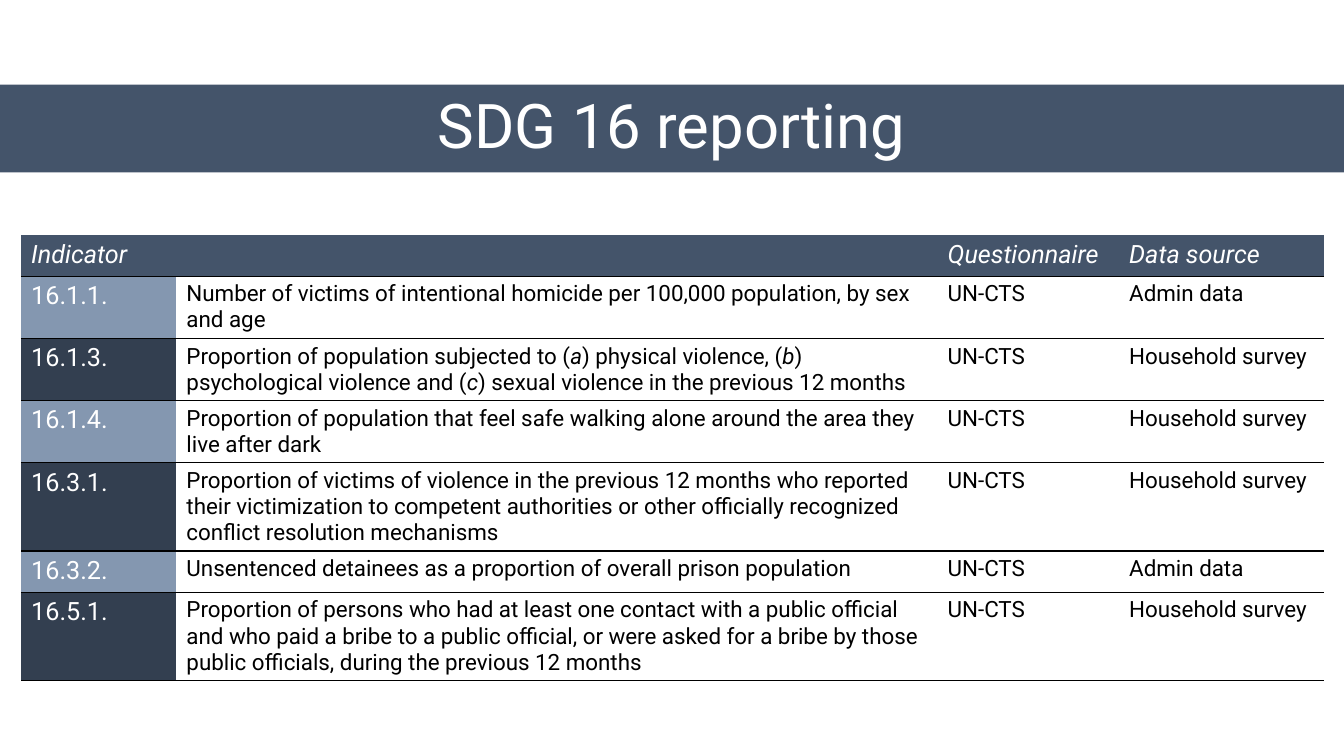
"""Build the SDG 16 reporting slide."""
from lxml import etree
from pptx import Presentation
from pptx.dml.color import RGBColor as Color
from pptx.enum.shapes import MSO_SHAPE as Shape
from pptx.enum.text import MSO_ANCHOR as Anchor, PP_ALIGN as Align
from pptx.oxml import parse_xml
from pptx.oxml.ns import nsdecls, qn
from pptx.util import Inches, Pt

COLORS = {
    "banner": "44546A",
    "light": "8497B0",
    "dark": "333F50",
    "white": "FFFFFF",
    "black": "000000",
}
NO_STYLE = "{2D5ABB26-0587-4C30-8999-92F81FD0307C}"
COLUMN_WIDTHS = [1.54, 7.55, 1.8, 2.03]
ROW_HEIGHTS = [0.41, 0.41, 0.41, 0.41, 0.49, 0.41, 0.41]
HEADERS = ["Indicator", "", "Questionnaire", "Data source"]
INDICATORS = [
    ("16.1.1.", "Number of victims of intentional homicide per 100,000 population, "
     "by sex and age", "Admin data"),
    ("16.1.3.", "Proportion of population subjected to (*a*) physical violence, (*b*) "
     "psychological violence and (*c*) sexual violence in the previous 12 months",
     "Household survey"),
    ("16.1.4.", "Proportion of population that feel safe walking alone around the area "
     "they live after dark", "Household survey"),
    ("16.3.1.", "Proportion of victims of violence in the previous 12 months who reported "
     "their victimization to competent authorities or other officially recognized "
     "conflict resolution mechanisms", "Household survey"),
    ("16.3.2.", "Unsentenced detainees as a proportion of overall prison population",
     "Admin data"),
    ("16.5.1.", "Proportion of persons who had at least one contact with a public official "
     "and who paid a bribe to a public official, or were asked for a bribe by those "
     "public officials, during the previous 12 months", "Household survey"),
]


def write(frame, text, font="Roboto", size=16, color="black", italic=False,
          align=Align.LEFT, spacing=None):
    para = frame.paragraphs[0]
    para.alignment = align
    para.line_spacing = spacing
    for index, part in enumerate(text.split("*")):
        if part:
            span = para.add_run()
            span.text = part
            span.font.name = font
            span.font.size = Pt(size)
            span.font.italic = italic or index % 2 == 1
            span.font.color.rgb = Color.from_string(COLORS[color])


class ReportSlide:
    def __init__(self, deck):
        self.page = deck.slides.add_slide(deck.slide_layouts[6])
        self.font = "Roboto"

    def banner(self, text, left, top, width, height):
        box = self.page.shapes.add_shape(
            Shape.RECTANGLE, Inches(left), Inches(top), Inches(width), Inches(height))
        box.shadow.inherit = False
        box.fill.solid()
        box.fill.fore_color.rgb = Color.from_string(COLORS["banner"])
        box.line.fill.background()
        box.text_frame.word_wrap = True
        box.text_frame.vertical_anchor = Anchor.MIDDLE
        write(box.text_frame, text, self.font, size=44, color="white",
              align=Align.CENTER, spacing=0.9)

    def cell(self, cell, text, fill=None, **style):
        if fill:
            cell.fill.solid()
            cell.fill.fore_color.rgb = Color.from_string(COLORS[fill])
        else:
            cell.fill.background()
        rule = parse_xml(f'<a:lnB {nsdecls("a")} w="{Pt(1)}"/>')
        solid = etree.SubElement(rule, qn("a:solidFill"))
        etree.SubElement(solid, qn("a:srgbClr"), val=COLORS["black"])
        cell._tc.get_or_add_tcPr().insert(0, rule)
        write(cell.text_frame, text, self.font, **style)

    def table(self, left, top, width, height):
        frame = self.page.shapes.add_table(
            len(ROW_HEIGHTS), len(COLUMN_WIDTHS),
            Inches(left), Inches(top), Inches(width), Inches(height))
        table = frame.table
        table.first_row = table.horz_banding = False
        table._tbl.tblPr.find(qn("a:tableStyleId")).text = NO_STYLE
        for column, size in zip(table.columns, COLUMN_WIDTHS):
            column.width = Inches(size)
        for row, size in zip(table.rows, ROW_HEIGHTS):
            row.height = Inches(size)
        for column, header in enumerate(HEADERS):
            self.cell(table.cell(0, column), header, "banner",
                      size=18, color="white", italic=True)
        table.cell(0, 0).merge(table.cell(0, 1))
        for row, (code, description, source) in enumerate(INDICATORS, 1):
            self.cell(table.cell(row, 0), code, "light" if row % 2 else "dark",
                      size=18, color="white")
            for column, text in enumerate((description, "UN-CTS", source), 1):
                self.cell(table.cell(row, column), text)


def main():
    deck = Presentation()
    deck.slide_width, deck.slide_height = Inches(13.33), Inches(7.5)
    slide = ReportSlide(deck)
    slide.banner("SDG 16 reporting", 0, 0.84, 13.33, 0.87)
    slide.table(0.21, 2.33, 12.92, 4.51)
    deck.save("out.pptx")


if __name__ == "__main__":
    main()
